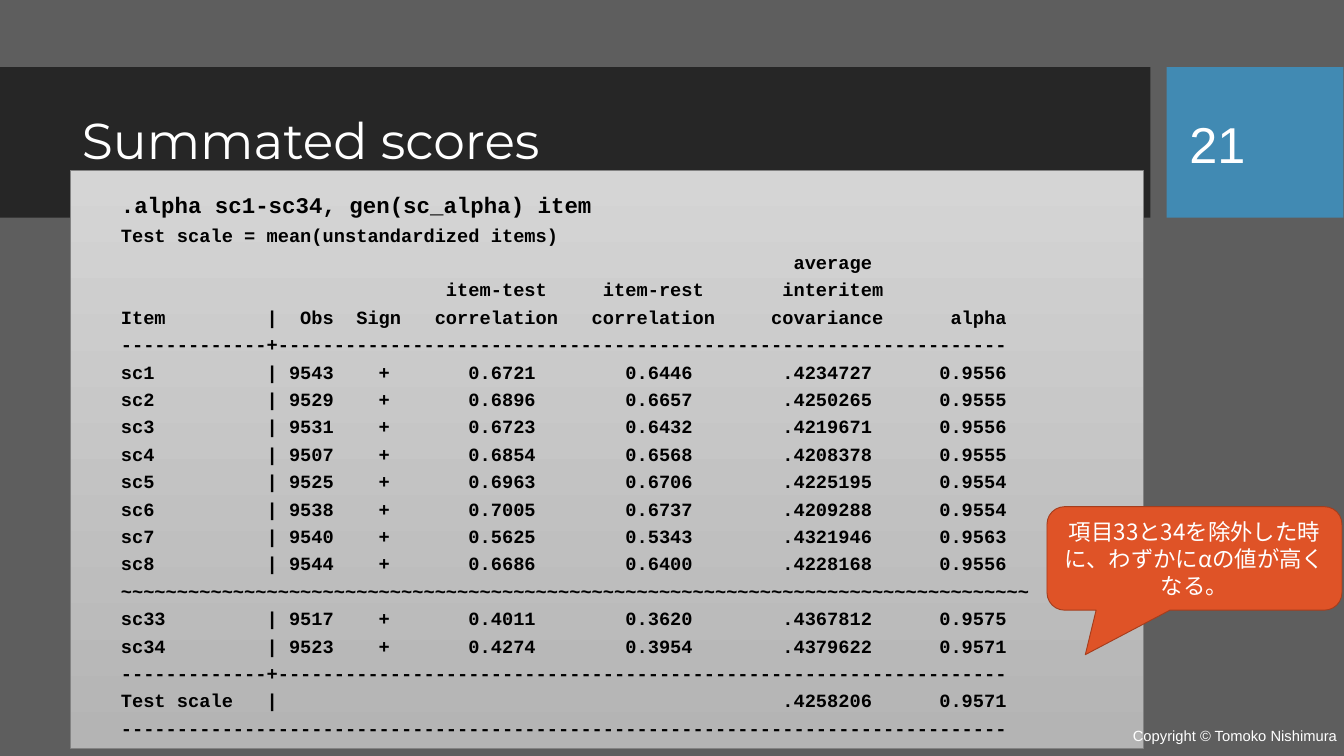
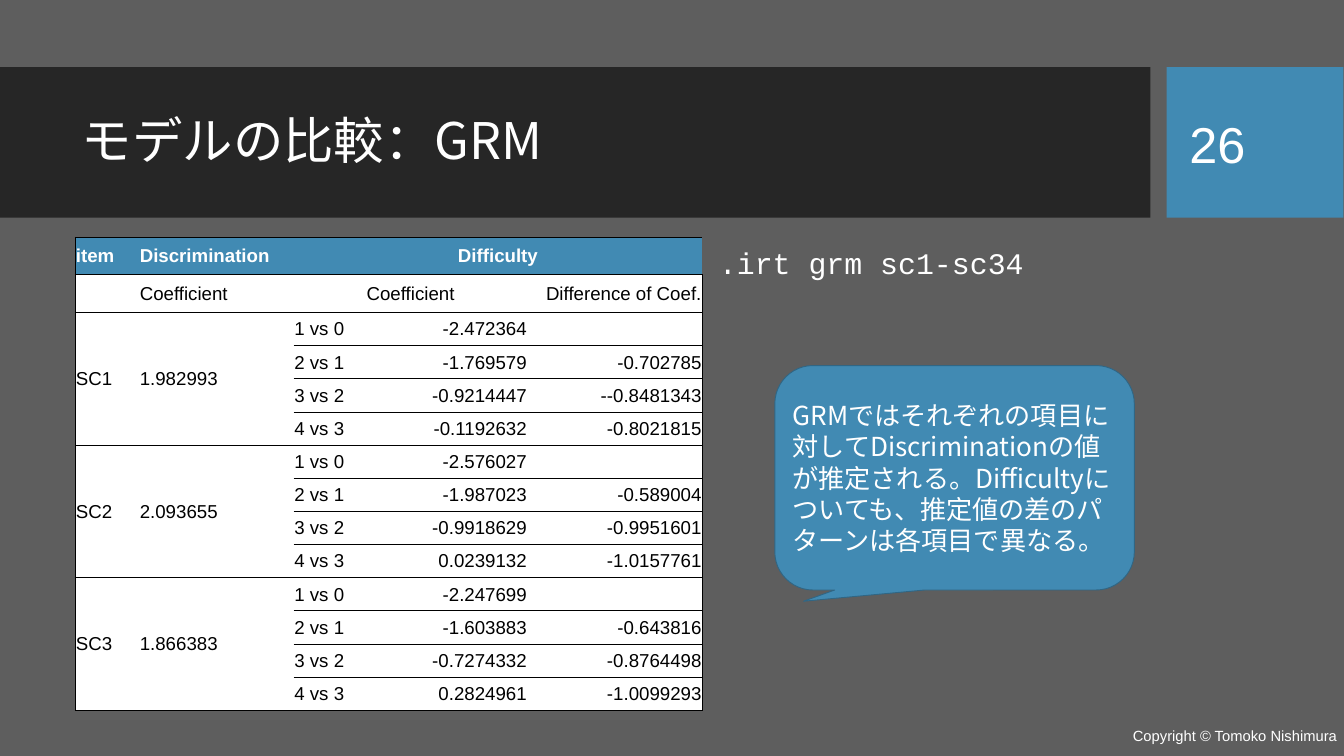
"""Build two slides on summated scores and a graded response model."""
from dataclasses import dataclass
from typing import NamedTuple

from lxml import etree
from pptx import Presentation
from pptx import util as u
from pptx.dml.color import RGBColor
from pptx.enum import shapes, text
from pptx.oxml import ns

GREY = RGBColor(0x5E, 0x5E, 0x5E)
CHARCOAL = RGBColor(0x26, 0x26, 0x26)
BLUE = RGBColor(0x41, 0x8A, 0xB3)
BLUE_EDGE = RGBColor(0x30, 0x66, 0x84)
ORANGE = RGBColor(0xDF, 0x53, 0x27)
ORANGE_EDGE = RGBColor(0xA5, 0x3D, 0x1D)
PANEL_TOP = RGBColor(0xD5, 0xD5, 0xD5)
PANEL_BOTTOM = RGBColor(0xB4, 0xB4, 0xB4)
PANEL_EDGE = RGBColor(0x83, 0x83, 0x83)
WHITE = RGBColor(0xFF, 0xFF, 0xFF)
BLACK = RGBColor(0, 0, 0)

SANS, MONO, HEADING, JAPANESE = "Arial", "Courier New", "Montserrat", "Noto Sans CJK JP"
LEFT, CENTER, RIGHT = text.PP_ALIGN.LEFT, text.PP_ALIGN.CENTER, text.PP_ALIGN.RIGHT
TOP, MIDDLE = text.MSO_ANCHOR.TOP, text.MSO_ANCHOR.MIDDLE
NO_STYLE = "{2D5ABB26-0587-4C30-8999-92F81FD0307C}"


class Area(NamedTuple):
    """Left, top, width and height in inches."""
    left: float
    top: float
    width: float
    height: float

    def lengths(self) -> list:
        return [u.Inches(value) for value in self]


@dataclass
class Style:
    """Look of a piece of text."""
    font: str
    size: float
    color: RGBColor = WHITE
    bold: bool = False
    align: text.PP_ALIGN = LEFT


@dataclass
class Callout:
    """Rounded speech bubble with its pointer."""
    area: Area
    pointer: tuple
    fill: RGBColor
    edge: RGBColor
    words: str
    style: Style


class ItemRow(NamedTuple):
    """One line of the reliability listing."""
    item: str
    obs: str
    sign: str
    item_test: str
    item_rest: str
    covariance: str
    alpha: str

    def line(self) -> str:
        return (f"{self.item:<13}|{self.obs:>5}{self.sign:>5}{self.item_test:>13}"
                f"{self.item_rest:>14}{self.covariance:>16}{self.alpha:>12}")


class GradedItem(NamedTuple):
    """Discrimination, difficulties and their differences for one item."""
    name: str
    discrimination: str
    difficulties: list
    differences: list


TITLE_AREA = Area(1.12, 1.24, 15.77, 1.77)
NUMBER_AREA = Area(17.6, 1.24, 1.89, 1.79)
COPYRIGHT_AREA = Area(16.76, 10.65, 3.24, 0.6)
BANDS = [(Area(0, 1, 17.12, 2.24), CHARCOAL), (Area(17.36, 1, 2.63, 2.24), BLUE)]

RULE = "-" * 13 + "+" + "-" * 65
ITEM_ROWS = [
    ItemRow("sc1", "9543", "+", "0.6721", "0.6446", ".4234727", "0.9556"),
    ItemRow("sc2", "9529", "+", "0.6896", "0.6657", ".4250265", "0.9555"),
    ItemRow("sc3", "9531", "+", "0.6723", "0.6432", ".4219671", "0.9556"),
    ItemRow("sc4", "9507", "+", "0.6854", "0.6568", ".4208378", "0.9555"),
    ItemRow("sc5", "9525", "+", "0.6963", "0.6706", ".4225195", "0.9554"),
    ItemRow("sc6", "9538", "+", "0.7005", "0.6737", ".4209288", "0.9554"),
    ItemRow("sc7", "9540", "+", "0.5625", "0.5343", ".4321946", "0.9563"),
    ItemRow("sc8", "9544", "+", "0.6686", "0.6400", ".4228168", "0.9556"),
]
LAST_ROWS = [
    ItemRow("sc33", "9517", "+", "0.4011", "0.3620", ".4367812", "0.9575"),
    ItemRow("sc34", "9523", "+", "0.4274", "0.3954", ".4379622", "0.9571"),
]
TOTAL_ROW = ItemRow("Test scale", "", "", "", "", ".4258206", "0.9571")
LISTING = [
    ".alpha sc1-sc34, gen(sc_alpha) item",
    "Test scale = mean(unstandardized items)",
    f"{'average':>67}",
    f"{'item-test':>38}{'item-rest':>14}{'interitem':>16}",
    "Item         |  Obs  Sign   correlation   correlation     covariance      alpha",
    RULE,
    *[row.line() for row in ITEM_ROWS],
    "~" * 81,
    *[row.line() for row in LAST_ROWS],
    RULE,
    TOTAL_ROW.line(),
    "-" * 79,
]

GRADED_ITEMS = [
    GradedItem("SC1", "1.982993",
               ["-2.472364", "-1.769579", "-0.9214447", "-0.1192632"],
               ["", "-0.702785", "--0.8481343", "-0.8021815"]),
    GradedItem("SC2", "2.093655",
               ["-2.576027", "-1.987023", "-0.9918629", "0.0239132"],
               ["", "-0.589004", "-0.9951601", "-1.0157761"]),
    GradedItem("SC3", "1.866383",
               ["-2.247699", "-1.603883", "-0.7274332", "0.2824961"],
               ["", "-0.643816", "-0.8764498", "-1.0099293"]),
]
STEPS = ["1 vs 0", "2 vs 1", "3 vs 2", "4 vs 3"]
COLUMN_WIDTHS = [0.95, 2.3, 1.4, 2.08, 2.6]
COLUMN_ALIGNS = [LEFT, LEFT, LEFT, RIGHT, RIGHT]
HEAD_ROWS = 2
HEAD_HEIGHT = 0.56
TABLE_AREA = Area(1.12, 3.53, 9.32, 7.04)

ALPHA_CALLOUT = Callout(
    Area(15.58, 7.54, 4.39, 1.54), (-0.37, 0.93), ORANGE, ORANGE_EDGE,
    "項目33と34を除外した時に、わずかにαの値が高くなる。",
    Style(JAPANESE, 24, align=CENTER))
GRM_CALLOUT = Callout(
    Area(11.53, 5.44, 5.35, 3.34), (-0.42, 0.55), BLUE, BLUE_EDGE,
    "GRMではそれぞれの項目に対してDiscriminationの値が推定される。"
    "Difficultyについても、推定値の差のパターンは各項目で異なる。",
    Style(JAPANESE, 28))


def format_paragraph(para, style: Style) -> None:
    """Apply a style to every run of a paragraph."""
    para.alignment = style.align
    for span in para.runs:
        font = span.font
        font.name, font.size, font.bold = style.font, u.Pt(style.size), style.bold
        font.color.rgb = style.color
        east_asian = etree.Element(ns.qn("a:ea"), typeface=style.font)
        span._r.rPr.find(ns.qn("a:latin")).addnext(east_asian)


def add_text(page, area: Area, words: str, style: Style,
             anchor: text.MSO_ANCHOR = MIDDLE, wrap: bool = True):
    """Add a text box and return its frame."""
    frame = page.shapes.add_textbox(*area.lengths()).text_frame
    frame.word_wrap, frame.vertical_anchor = wrap, anchor
    frame.text = words
    for para in frame.paragraphs:
        format_paragraph(para, style)
    return frame


def add_box(page, kind, area: Area, fill: RGBColor):
    """Add a flat filled shape without an outline."""
    box = page.shapes.add_shape(kind, *area.lengths())
    box.shadow.inherit = False
    box.fill.solid()
    box.fill.fore_color.rgb = fill
    box.line.fill.background()
    return box


def outline(box, color: RGBColor, width: float) -> None:
    """Give a shape a solid outline."""
    box.line.color.rgb = color
    box.line.width = u.Pt(width)


def add_page(deck, title: str, title_font: str, number: int):
    """Add a page with bands, title and page number."""
    page = deck.slides.add_slide(deck.slide_layouts[6])
    page.background.fill.solid()
    page.background.fill.fore_color.rgb = GREY
    for area, fill in BANDS:
        add_box(page, shapes.MSO_SHAPE.RECTANGLE, area, fill)
    heading = add_text(page, TITLE_AREA, title, Style(title_font, 54))
    heading.paragraphs[0].line_spacing = 0.9
    add_text(page, NUMBER_AREA, str(number), Style(SANS, 54))
    return page


def add_copyright(page) -> None:
    """Add the copyright line in the bottom corner."""
    add_text(page, COPYRIGHT_AREA, "Copyright © Tomoko Nishimura",
             Style(SANS, 15.8), wrap=False)


def add_callout(page, callout: Callout) -> None:
    """Draw a speech bubble."""
    box = add_box(page, shapes.MSO_SHAPE.ROUNDED_RECTANGULAR_CALLOUT,
                  callout.area, callout.fill)
    for index, value in enumerate((*callout.pointer, 0.17)):
        box.adjustments[index] = value
    outline(box, callout.edge, 1)
    frame = box.text_frame
    frame.word_wrap, frame.vertical_anchor = True, MIDDLE
    frame.text = callout.words
    format_paragraph(frame.paragraphs[0], callout.style)


def add_listing(page) -> None:
    """Draw the shaded panel with the reliability listing."""
    panel = add_box(page, shapes.MSO_SHAPE.RECTANGLE, Area(1.04, 2.53, 15.97, 8.6), PANEL_TOP)
    panel.fill.gradient()
    panel.fill.gradient_angle = 270
    for stop, color in zip(panel.fill.gradient_stops, (PANEL_TOP, PANEL_BOTTOM)):
        stop.color.rgb = color
    outline(panel, PANEL_EDGE, 0.75)
    frame = add_text(page, Area(1.7, 2.8, 16.08, 8.35), "\n".join(LISTING),
                     Style(MONO, 20, BLACK, bold=True), TOP)
    command, *results = frame.paragraphs
    command.runs[0].font.size = u.Pt(24)
    for para in results:
        para.space_before = u.Pt(5.35)


def set_borders(cell, sides: str) -> None:
    """Rule the given sides of a cell in black."""
    props = cell._tc.get_or_add_tcPr()
    for side in sides:
        line = etree.SubElement(props, ns.qn(f"a:ln{side}"), w=str(u.Pt(1)))
        fill = etree.SubElement(line, ns.qn("a:solidFill"))
        etree.SubElement(fill, ns.qn("a:srgbClr"), val=str(BLACK))


def table_rows() -> list:
    """Return the cell texts row by row."""
    rows = [["item", "Discrimination", "Difficulty", "", ""],
            ["", "Coefficient", "Coefficient", "", "Difference of Coef."]]
    for item in GRADED_ITEMS:
        names = [[item.name, item.discrimination]] + [["", ""]] * (len(STEPS) - 1)
        values = zip(STEPS, item.difficulties, item.differences)
        rows += [name + list(value) for name, value in zip(names, values)]
    return rows


def add_difficulty_table(page) -> None:
    """Draw the table of discriminations and difficulties."""
    rows = table_rows()
    last = len(COLUMN_WIDTHS) - 1
    frame = page.shapes.add_table(len(rows), last + 1, *TABLE_AREA.lengths())
    table = frame.table
    table._tbl.tblPr.find(ns.qn("a:tableStyleId")).text = NO_STYLE
    table.first_row = table.horz_banding = False
    for column, width in zip(table.columns, COLUMN_WIDTHS):
        column.width = u.Inches(width)
    body_height = (TABLE_AREA.height - HEAD_ROWS * HEAD_HEIGHT) / (len(rows) - HEAD_ROWS)
    for index, row in enumerate(table.rows):
        row.height = u.Inches(HEAD_HEIGHT if index < HEAD_ROWS else body_height)
    table.cell(0, 2).merge(table.cell(0, 4))
    table.cell(1, 2).merge(table.cell(1, 3))
    for top in range(HEAD_ROWS, len(rows), len(STEPS)):
        for col in (0, 1):
            table.cell(top, col).merge(table.cell(top + len(STEPS) - 1, col))
    for r, words in enumerate(rows):
        for c, word in enumerate(words):
            cell = table.cell(r, c)
            cell.margin_left = cell.margin_top = cell.margin_right = u.Inches(0.01)
            cell.margin_bottom = 0
            cell.vertical_anchor = MIDDLE
            ruled = r < HEAD_ROWS or not cell.is_spanned
            set_borders(cell, "L" * (c == 0) + "R" * (c == last) + "TB" * ruled)
            cell.fill.solid()
            cell.fill.fore_color.rgb = BLUE if r == 0 else WHITE
            if word:
                cell.text_frame.text = word
                align = CENTER if r < HEAD_ROWS and c == 2 else COLUMN_ALIGNS[c]
                color = WHITE if r == 0 else BLACK
                format_paragraph(cell.text_frame.paragraphs[0],
                                 Style(SANS, 20, color, r == 0, align))


def main() -> None:
    """Build and save the deck."""
    deck = Presentation()
    deck.slide_width, deck.slide_height = u.Inches(20), u.Inches(11.25)

    scores = add_page(deck, "Summated scores", HEADING, 21)
    add_listing(scores)
    add_callout(scores, ALPHA_CALLOUT)
    add_copyright(scores)

    model = add_page(deck, "モデルの比較：GRM", JAPANESE, 26)
    add_difficulty_table(model)
    add_callout(model, GRM_CALLOUT)
    add_text(model, Area(10.6, 3.59, 4.79, 0.64), ".irt grm sc1-sc34",
             Style(MONO, 32), TOP, wrap=False)
    add_copyright(model)

    deck.save("out.pptx")


if __name__ == "__main__":
    main()
